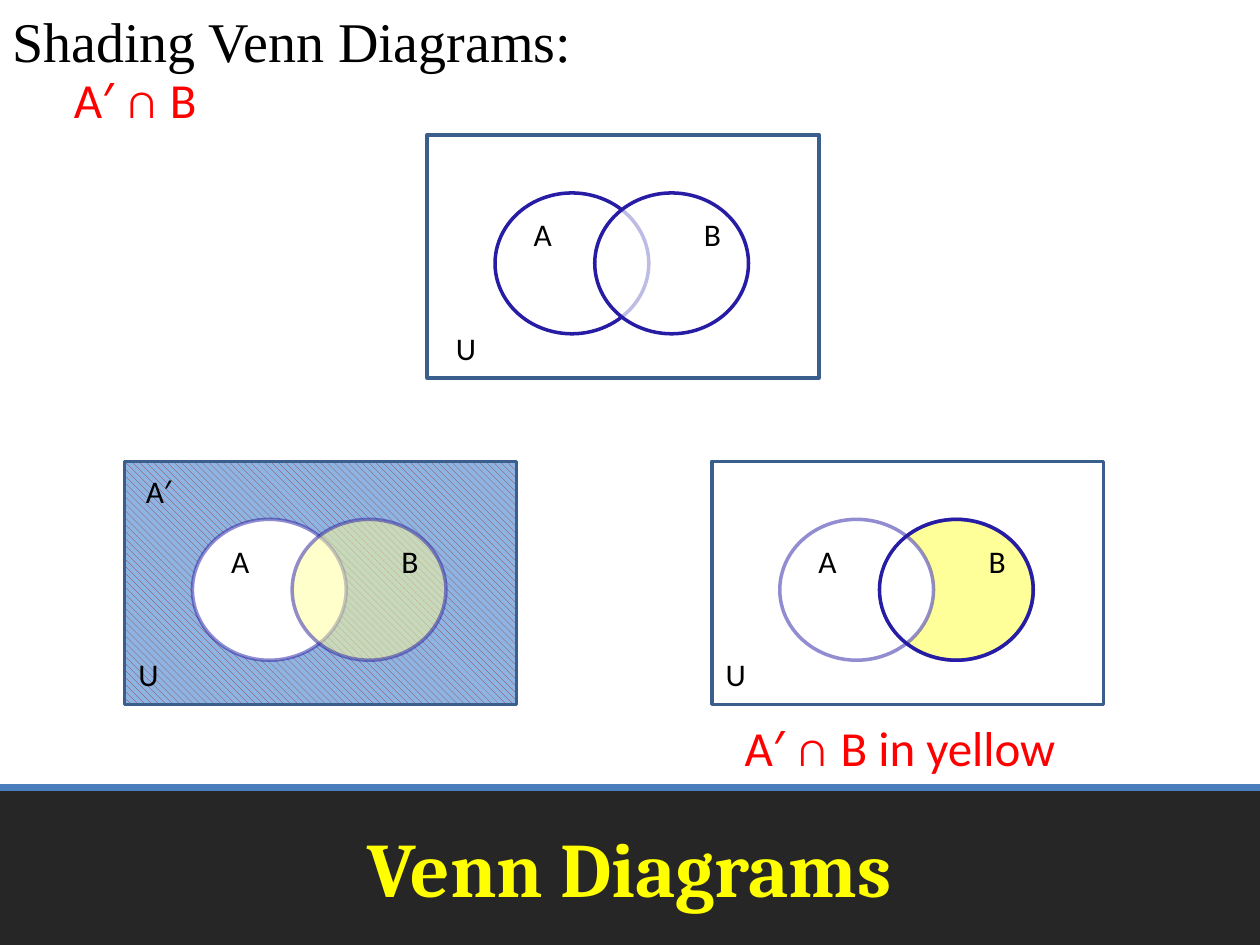
import pptx
import pptx.dml.color
import pptx.enum.dml
import pptx.enum.shapes
import pptx.enum.text
import pptx.oxml
import pptx.oxml.ns
import pptx.util

Cm = pptx.util.Cm
Pt = pptx.util.Pt
RGBColor = pptx.dml.color.RGBColor
SHAPE = pptx.enum.shapes.MSO_SHAPE
qn = pptx.oxml.ns.qn

BLACK = RGBColor(0x00, 0x00, 0x00)
WHITE = RGBColor(0xFF, 0xFF, 0xFF)
RED = RGBColor(0xFF, 0x00, 0x00)
YELLOW = RGBColor(0xFF, 0xFF, 0x00)
PALE_YELLOW = RGBColor(0xFF, 0xFF, 0x99)
FOOTER_GREY = RGBColor(0x26, 0x26, 0x26)
FOOTER_BLUE = RGBColor(0x4B, 0x7E, 0xBC)
FRAME_BLUE = RGBColor(0x3A, 0x5F, 0x8C)
CIRCLE_BLUE = RGBColor(0x27, 0x1D, 0xA5)
HATCH_RED = RGBColor(0x95, 0x37, 0x35)
HATCH_BLUE = RGBColor(0x8E, 0xB4, 0xE3)

SLIDE_WIDTH, SLIDE_HEIGHT = 25.4, 19.05
FOOTER_TOP = 15.88
FRAME_SIZE = (7.9, 4.9)
CIRCLE_SIZE = (3.1, 2.84)
CIRCLE_TOP = 1.17
CIRCLE_LEFT = {"A": 1.37, "B": 3.38}
LETTER_TOP = 1.5
LETTER_LEFT = {"A": 1.9, "B": 5.33}
UNIVERSE_TOP = 3.78


def set_opacity(color_parent, percent):
    """Make the solid colour below color_parent partly transparent."""
    color = color_parent.find(qn("a:solidFill")).find(qn("a:srgbClr"))
    alpha = color.makeelement(qn("a:alpha"), {"val": str(percent * 1000)})
    color.append(alpha)


class VennSlide:
    def __init__(self, slide, font="Calibri"):
        self.shapes = slide.shapes
        self.font = font

    def outline(self, kind, left, top, size, fill=None, line=None,
                fill_opacity=100, line_opacity=100):
        shape = self.shapes.add_shape(kind, Cm(left), Cm(top), *map(Cm, size))
        shape.shadow.inherit = False
        if fill is None:
            shape.fill.background()
        else:
            shape.fill.solid()
            shape.fill.fore_color.rgb = fill
        if line is None:
            shape.line.fill.background()
        else:
            shape.line.color.rgb = line
            shape.line.width = Pt(2)
        properties = shape.element.spPr
        if fill_opacity < 100:
            set_opacity(properties, fill_opacity)
        if line_opacity < 100:
            set_opacity(properties.find(qn("a:ln")), line_opacity)
        return shape

    def rule(self, top, color, width):
        line = self.shapes.add_connector(
            pptx.enum.shapes.MSO_CONNECTOR.STRAIGHT,
            0, Cm(top), Cm(SLIDE_WIDTH), Cm(top))
        line.line.color.rgb = color
        line.line.width = Pt(width)
        properties = line.element.spPr
        properties.append(properties.makeelement(qn("a:effectLst"), {}))

    def text(self, words, left, top, width, height, size=18, color=BLACK,
             font=None, bold=False):
        box = self.shapes.add_textbox(Cm(left), Cm(top), Cm(width), Cm(height))
        frame = box.text_frame
        frame.word_wrap = True
        frame.text = words
        style = frame.paragraphs[0].runs[0].font
        style.name = font or self.font
        style.size = Pt(size)
        style.bold = bold
        style.color.rgb = color
        return frame

    def universe(self, left, top, letter_left=0.03):
        frame = self.outline(SHAPE.RECTANGLE, left, top, FRAME_SIZE,
                             WHITE, FRAME_BLUE)
        self.text("U", left + letter_left, top + UNIVERSE_TOP, 0.81, 1.02)
        return frame

    def circle(self, name, left, top, fill=None, **opacity):
        self.outline(SHAPE.OVAL, left + CIRCLE_LEFT[name], top + CIRCLE_TOP,
                     CIRCLE_SIZE, fill, CIRCLE_BLUE, **opacity)

    def set_letters(self, left, top):
        for name, offset in LETTER_LEFT.items():
            self.text(name, left + offset, top + LETTER_TOP, 0.81, 1.02)

    def footer(self, title):
        height = SLIDE_HEIGHT - FOOTER_TOP
        self.outline(SHAPE.RECTANGLE, 0, FOOTER_TOP, (SLIDE_WIDTH, height),
                     FOOTER_GREY)
        self.rule(FOOTER_TOP, FOOTER_BLUE, 4)
        frame = self.text(title, 1.27, FOOTER_TOP, 22.86, height, 44, YELLOW,
                          "Cambria", bold=True)
        frame.vertical_anchor = pptx.enum.text.MSO_ANCHOR.MIDDLE
        frame.paragraphs[0].alignment = pptx.enum.text.PP_ALIGN.CENTER


def main():
    presentation = pptx.Presentation()
    presentation.slide_width = Cm(SLIDE_WIDTH)
    presentation.slide_height = Cm(SLIDE_HEIGHT)
    venn = VennSlide(presentation.slides.add_slide(presentation.slide_layouts[6]))

    venn.footer("Venn Diagrams")
    heading = venn.text("Shading Venn Diagrams:", 0, 0, SLIDE_WIDTH, 1.47, 32,
                        font="Times New Roman")
    heading.paragraphs[0].space_before = Pt(4)
    question = venn.text("A′ ∩ B", -0.03, 1.27, 4.9, 1.45, 28, RED)
    question.paragraphs[0].runs[0].font.bold = False
    question.margin_left = Cm(1.52)

    unshaded = (8.61, 2.72)
    venn.universe(*unshaded, letter_left=0.33)
    venn.circle("A", *unshaded, fill=WHITE)
    venn.circle("B", *unshaded, fill=WHITE, fill_opacity=70)
    venn.set_letters(*unshaded)

    complement = (2.51, 9.3)
    hatched = venn.universe(*complement).fill
    hatched.patterned()
    hatched.pattern = pptx.enum.dml.MSO_PATTERN.WIDE_DOWNWARD_DIAGONAL
    hatched.fore_color.rgb = HATCH_RED
    hatched.back_color.rgb = HATCH_BLUE
    venn.circle("A", *complement, fill=WHITE, line_opacity=50)
    venn.circle("B", *complement, fill=PALE_YELLOW, fill_opacity=50,
                line_opacity=50)
    venn.set_letters(*complement)

    answer = (14.35, 9.3)
    venn.universe(*answer)
    venn.circle("B", *answer, fill=PALE_YELLOW, line_opacity=50)
    venn.circle("A", *answer, fill=WHITE, line_opacity=50)
    venn.set_letters(*answer)
    venn.circle("B", *answer)

    venn.text("A′ ∩ B in yellow", 14.76, 14.33, 7.37, 1.45, 28, RED)
    venn.text("A′", 2.69, 9.4, 1.32, 1.02)

    presentation.save("out.pptx")


if __name__ == "__main__":
    main()
